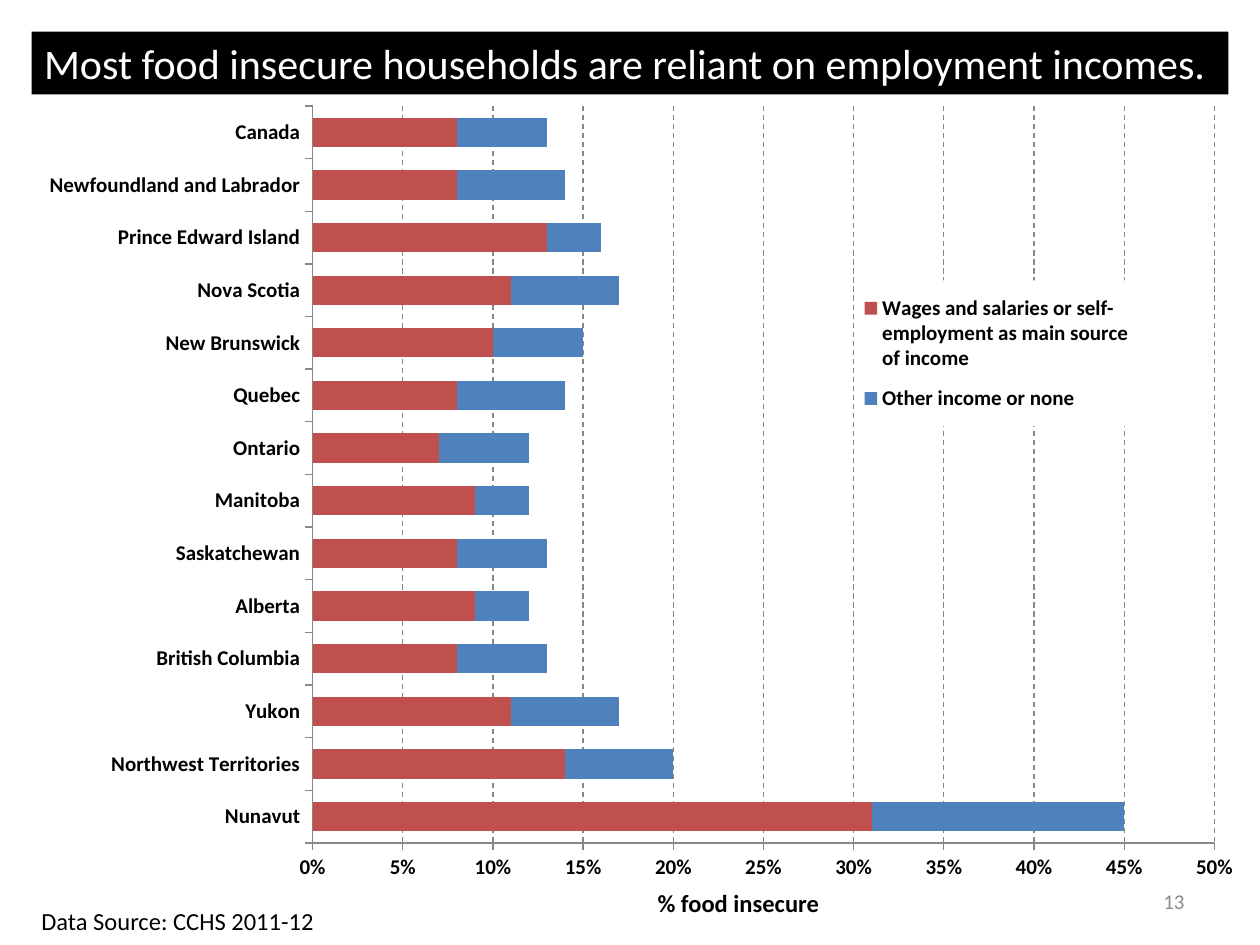
import typing

import pptx
import pptx.chart.data
import pptx.dml.color
import pptx.enum.chart
import pptx.enum.dml
import pptx.enum.text
import pptx.oxml
import pptx.oxml.ns
import pptx.util

WIDTH, HEIGHT = pptx.util.Inches(10), pptx.util.Inches(7.5)
FONT = "Calibri"
BLACK, WHITE, GRID, MUTED = "000000", "FFFFFF", "878787", "8C8C8C"
TITLE_ONLY = 5
ALIGN = pptx.enum.text.PP_ALIGN
ANCHOR = pptx.enum.text.MSO_ANCHOR


class Area(typing.NamedTuple):
    """A rectangle given as shares of whatever holds it."""
    left: float
    top: float
    width: float
    height: float

    def on_page(self) -> tuple[int, ...]:
        return tuple(round(share * side) for share, side in
                     zip(self, (WIDTH, HEIGHT, WIDTH, HEIGHT)))


class Region(typing.NamedTuple):
    name: str
    wages: float
    other: float


class Series(typing.NamedTuple):
    name: str
    field: str
    colour: str


REGIONS = [
    Region("Nunavut", 0.31, 0.14),
    Region("Northwest Territories", 0.14, 0.06),
    Region("Yukon", 0.11, 0.06),
    Region("British Columbia", 0.08, 0.05),
    Region("Alberta", 0.09, 0.03),
    Region("Saskatchewan", 0.08, 0.05),
    Region("Manitoba", 0.09, 0.03),
    Region("Ontario", 0.07, 0.05),
    Region("Quebec", 0.08, 0.06),
    Region("New Brunswick", 0.1, 0.05),
    Region("Nova Scotia", 0.11, 0.06),
    Region("Prince Edward Island", 0.13, 0.03),
    Region("Newfoundland and Labrador", 0.08, 0.06),
    Region("Canada", 0.08, 0.05),
]
SERIES = [
    Series("Wages and salaries or self-employment as main source of income",
           "wages", "C0504D"),
    Series("Other income or none", "other", "4F81BD"),
]


def rgb(colour: str) -> pptx.dml.color.RGBColor:
    return pptx.dml.color.RGBColor.from_string(colour)


def set_font(font, size: float, colour: str = BLACK, bold: bool = False) -> None:
    font.name, font.size, font.bold = FONT, pptx.util.Pt(size), bold
    font.color.rgb = rgb(colour)


def write(box, text: str, *, size: float, colour: str = BLACK, bold: bool = False,
          align=ALIGN.LEFT, anchor=ANCHOR.TOP, wrap: bool = True) -> None:
    frame = box.text_frame
    frame.auto_size = pptx.enum.text.MSO_AUTO_SIZE.NONE
    frame.word_wrap, frame.vertical_anchor = wrap, anchor
    para = frame.paragraphs[0]
    para.alignment = align
    span = para.add_run()
    span.text = text
    set_font(span.font, size, colour, bold)


def add_label(page, area: Area, text: str, **style) -> None:
    write(page.shapes.add_textbox(*area.on_page()), text, **style)


def layout_xml(area: Area, inner: bool = False):
    """Manual chart layout, as shares of the chart's frame."""
    target = '<c:layoutTarget val="inner"/>' if inner else ""
    sides = "".join(f'<c:{tag} val="{share}"/>' for tag, share in zip("xywh", area))
    return pptx.oxml.parse_xml(
        f'<c:layout {pptx.oxml.ns.nsdecls("c")}><c:manualLayout>{target}'
        f'<c:xMode val="edge"/><c:yMode val="edge"/>{sides}'
        f'</c:manualLayout></c:layout>')


def drop_layout(element) -> None:
    for old in element.findall(pptx.oxml.ns.qn("c:layout")):
        element.remove(old)


def style_axis(axis) -> None:
    axis.major_tick_mark = pptx.enum.chart.XL_TICK_MARK.OUTSIDE
    axis.minor_tick_mark = pptx.enum.chart.XL_TICK_MARK.NONE
    axis.format.line.color.rgb = rgb(GRID)
    axis.format.line.width = pptx.util.Pt(0.75)
    set_font(axis.tick_labels.font, 12, bold=True)


def style_legend(chart, area: Area) -> None:
    chart.has_legend = True
    legend = chart.legend
    legend.position = pptx.enum.chart.XL_LEGEND_POSITION.RIGHT
    legend.include_in_layout = False
    set_font(legend.font, 12, bold=True)
    element = legend._element
    drop_layout(element)
    element.find(pptx.oxml.ns.qn("c:legendPos")).addnext(layout_xml(area))
    element.find(pptx.oxml.ns.qn("c:txPr")).addprevious(pptx.oxml.parse_xml(
        f'<c:spPr {pptx.oxml.ns.nsdecls("c", "a")}><a:solidFill>'
        f'<a:srgbClr val="{WHITE}"/></a:solidFill></c:spPr>'))


def add_income_chart(page, area: Area) -> None:
    data = pptx.chart.data.CategoryChartData(number_format="0%")
    data.categories = [region.name for region in REGIONS]
    for series in SERIES:
        data.add_series(series.name, [getattr(region, series.field) for region in REGIONS])
    chart = page.shapes.add_chart(
        pptx.enum.chart.XL_CHART_TYPE.BAR_STACKED, *area.on_page(), data).chart
    chart.has_title = False
    set_font(chart.font, 10)

    plot = chart.plots[0]
    plot.gap_width, plot.overlap, plot.vary_by_categories = 80, 100, False
    for drawn, series in zip(plot.series, SERIES):
        drawn.format.fill.solid()
        drawn.format.fill.fore_color.rgb = rgb(series.colour)

    style_axis(chart.category_axis)
    values = chart.value_axis
    style_axis(values)
    values.minimum_scale, values.maximum_scale, values.major_unit = 0, 0.5, 0.05
    values.tick_labels.number_format = "0%"
    values.tick_labels.number_format_is_linked = False
    values.has_major_gridlines = True
    line = values.major_gridlines.format.line
    line.color.rgb, line.width = rgb(GRID), pptx.util.Pt(0.75)
    line.dash_style = pptx.enum.dml.MSO_LINE.DASH

    plot_area = chart._chartSpace.chart.plotArea
    drop_layout(plot_area)
    plot_area.insert(0, layout_xml(Area(0.233, 0.075, 0.741, 0.858), inner=True))
    style_legend(chart, Area(0.68, 0.278, 0.23, 0.17))


def place_title(page, area: Area, text: str) -> None:
    title = page.shapes.title
    title.left, title.top, title.width, title.height = area.on_page()
    title.fill.solid()
    title.fill.fore_color.rgb = rgb(BLACK)
    write(title, text, size=24, colour=WHITE, anchor=ANCHOR.MIDDLE, wrap=False)
    page.shapes._spTree.append(title._element)  # in front of the chart


def main() -> None:
    deck = pptx.Presentation()
    deck.slide_width, deck.slide_height = WIDTH, HEIGHT
    page = deck.slides.add_slide(deck.slide_layouts[TITLE_ONLY])
    add_label(page, Area(0.023, 0.952, 0.977, 0.045), "Data Source: CCHS 2011-12", size=14)
    add_income_chart(page, Area(0.023, 0.044, 0.966, 0.909))
    add_label(page, Area(0.512, 0.933, 0.208, 0.045), "% food insecure", size=14, bold=True)
    add_label(page, Area(0.717, 0.927, 0.233, 0.053), "13", size=12, colour=MUTED,
              align=ALIGN.RIGHT, anchor=ANCHOR.MIDDLE)
    place_title(page, Area(0.025, 1 / 30, 0.95, 1 / 15),
                "Most food insecure households are reliant on employment incomes.")
    deck.save("out.pptx")


if __name__ == "__main__":
    main()
